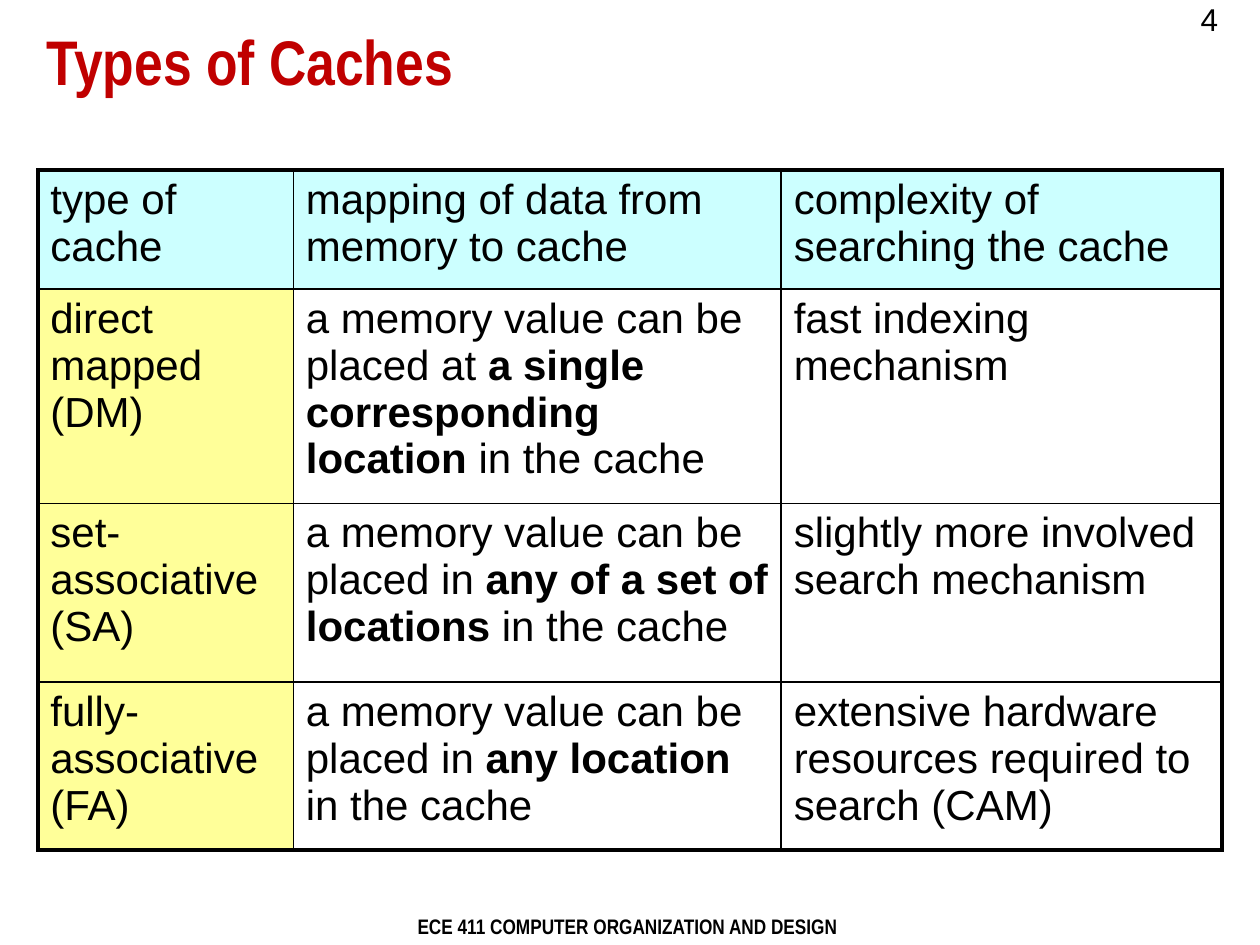
from lxml.etree import SubElement
from pptx import Presentation
from pptx.dml.color import RGBColor
from pptx.enum.text import MSO_ANCHOR, MSO_AUTO_SIZE, PP_ALIGN
from pptx.oxml import parse_xml
from pptx.oxml.ns import nsdecls, qn
from pptx.util import Pt

# Content: each table cell is a list of pieces, every second piece is bold
TITLE = "Types of Caches"
PAGE_NUMBER = "4"
FOOTER = "ECE 411 COMPUTER ORGANIZATION AND DESIGN "
CACHE_TYPES = [
    [["type of cache"],
     ["mapping of data from memory to cache"],
     ["complexity of searching the cache"]],
    [["direct mapped (DM)"],
     ["a memory value can be placed at ", "a single corresponding location",
      " in the cache"],
     ["fast indexing mechanism"]],
    [["set-associative (SA)"],
     ["a memory value can be placed in ", "any of a set of locations",
      " in the cache"],
     ["slightly more involved search mechanism"]],
    [["fully-associative (FA)"],
     ["a memory value can be placed in ", "any location", " in the cache"],
     ["extensive hardware resources required to search (CAM)"]],
]

# Layout in points
SLIDE_SIZE = (720, 540)
TITLE_BOX = (26.6, 10.8, 669.6, 53.3)
NUMBER_BOX = (679, 0, 41, 26)
FOOTER_BOX = (0, 518.4, 720, 21.6)
TABLE_ORIGIN = (21.6, 97.2)
COLUMN_WIDTHS = [146, 278.8, 252]
ROW_HEIGHTS = [68, 121.5, 102.2, 96]

THEME = {
    "text": "000000", "title": "C00000", "shadow": "B2B2B2",
    "header": "CCFFFF", "row_label": "FFFF99", "cell": "FFFFFF",
    "font": "Arial", "narrow": "Arial Narrow",
    "title_size": 36, "cell_size": 24, "number_size": 18, "footer_size": 12,
    "inner_line": 1, "outer_line": 2.25,
}


def style(font, size, face="font", color="text", bold=False):
    font.name = THEME[face]
    font.size = Pt(THEME[size])
    font.bold = bold
    font.color.rgb = RGBColor.from_string(THEME[color])


def add_label(slide, box, text, size, **look):
    label = slide.shapes.add_textbox(*map(Pt, box))
    label.text_frame.word_wrap = True
    paragraph = label.text_frame.paragraphs[0]
    paragraph.text = text
    style(paragraph.runs[0].font, size, **look)
    return paragraph


def add_shadow(run):
    effects = SubElement(run.font._element, qn("a:effectLst"))
    effects.append(parse_xml(
        f'<a:outerShdw {nsdecls("a")} dist="38100" dir="2700000">'
        f'<a:srgbClr val="{THEME["shadow"]}"/></a:outerShdw>'))
    # Effects stand between the fill and the typeface
    run.font._element.find(qn("a:solidFill")).addnext(effects)


def set_borders(cell, outer_sides):
    properties = cell._tc.get_or_add_tcPr()
    for index, side in enumerate("LRTB"):
        weight = THEME["outer_line" if outer_sides[side] else "inner_line"]
        properties.insert(index, parse_xml(
            f'<a:ln{side} {nsdecls("a")} w="{Pt(weight)}"><a:solidFill>'
            f'<a:srgbClr val="{THEME["text"]}"/></a:solidFill></a:ln{side}>'))


presentation = Presentation()
presentation.slide_width, presentation.slide_height = map(Pt, SLIDE_SIZE)
slide = presentation.slides.add_slide(presentation.slide_layouts[5])

# Page number and footer
number = add_label(slide, NUMBER_BOX, PAGE_NUMBER, "number_size")
number.line_spacing = 0.85
footer = add_label(slide, FOOTER_BOX, FOOTER, "footer_size", face="narrow", bold=True)
footer.alignment = PP_ALIGN.CENTER

# Title
title = slide.shapes.title
title.left, title.top, title.width, title.height = map(Pt, TITLE_BOX)
frame = title.text_frame
frame.text = TITLE
frame.word_wrap = True
frame.auto_size = MSO_AUTO_SIZE.NONE
frame.vertical_anchor = MSO_ANCHOR.MIDDLE
frame.margin_left = frame.margin_right = frame.margin_top = frame.margin_bottom = 0
heading = frame.paragraphs[0]
heading.alignment = PP_ALIGN.LEFT
heading.line_spacing = 0.87
style(heading.runs[0].font, "title_size", "narrow", "title", True)
add_shadow(heading.runs[0])

# Table of cache types
row_count, column_count = len(ROW_HEIGHTS), len(COLUMN_WIDTHS)
table = slide.shapes.add_table(
    row_count, column_count, *map(Pt, TABLE_ORIGIN),
    Pt(sum(COLUMN_WIDTHS)), Pt(sum(ROW_HEIGHTS))).table
table.first_row = table.horz_banding = False
for column, width in zip(table.columns, COLUMN_WIDTHS):
    column.width = Pt(width)
for row, height in zip(table.rows, ROW_HEIGHTS):
    row.height = Pt(height)

for r, cache_type in enumerate(CACHE_TYPES):
    for c, pieces in enumerate(cache_type):
        cell = table.cell(r, c)
        paragraph = cell.text_frame.paragraphs[0]
        for position, piece in enumerate(pieces):
            run = paragraph.add_run()
            run.text = piece
            style(run.font, "cell_size", bold=position % 2 == 1)
        color = "header" if r == 0 else "row_label" if c == 0 else "cell"
        cell.fill.solid()
        cell.fill.fore_color.rgb = RGBColor.from_string(THEME[color])
        set_borders(cell, {"L": c == 0, "R": c == column_count - 1,
                           "T": r == 0, "B": r == row_count - 1})

presentation.save("out.pptx")
